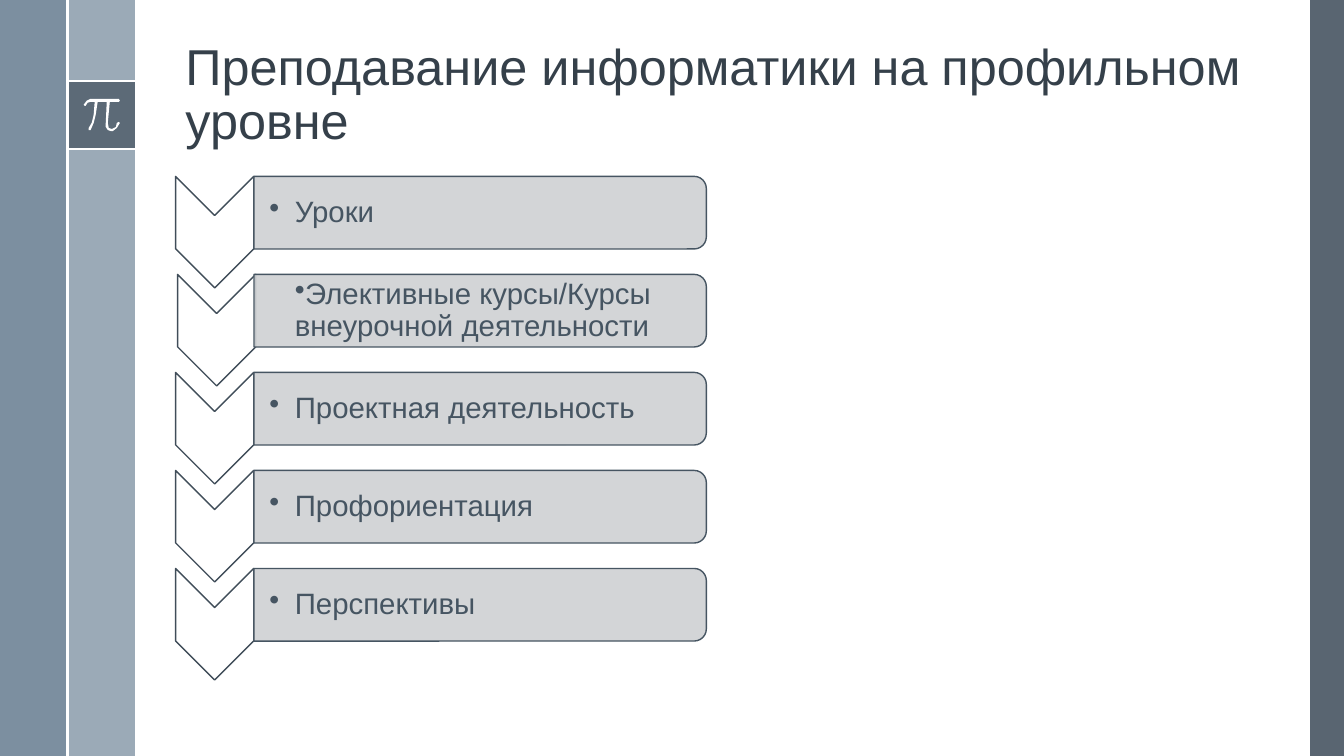
from dataclasses import dataclass

from lxml.etree import SubElement
from pptx import Presentation
from pptx.dml.color import RGBColor
from pptx.enum.shapes import MSO_CONNECTOR as Connector, MSO_SHAPE as Shape
from pptx.enum.text import MSO_ANCHOR as Anchor, MSO_AUTO_SIZE as AutoSize, PP_ALIGN as Align
from pptx.oxml.ns import qn
from pptx.util import Cm, Pt


@dataclass(frozen=True)
class Theme:
    font: str = "Arial"
    title_size: float = 36
    body_size: float = 21
    outline: float = 1
    rule: float = 1.5
    white: str = "FFFFFF"
    title: str = "35404A"
    dark: str = "475562"
    mid: str = "6A8093"
    light: str = "9BAAB7"
    chevron_line: str = "404D59"
    panel: str = "CFD1D3"
    body: str = "465562"


class SlideBuilder:
    def __init__(self, deck, theme):
        self.theme = theme
        self.page = deck.slides.add_slide(deck.slide_layouts[5])

    def paint(self, shape, fill, line=None, opacity=100):
        shape.shadow.inherit = False
        shape.fill.solid()
        shape.fill.fore_color.rgb = RGBColor.from_string(fill)
        if opacity < 100:
            color = shape.element.spPr.find(qn("a:solidFill"))[0]
            SubElement(color, qn("a:alpha"), val=str(opacity * 1000))
        if line:
            shape.line.color.rgb = RGBColor.from_string(line)
            shape.line.width = Pt(self.theme.outline)
        else:
            shape.line.fill.background()

    def block(self, left, top, width, height, fill, opacity=100):
        box = self.page.shapes.add_shape(
            Shape.RECTANGLE, Cm(left), Cm(top), Cm(width), Cm(height))
        self.paint(box, fill, opacity=opacity)

    def turned(self, kind, center_x, center_y, width, height, fill, line, opacity=100):
        """Add a shape turned a quarter clockwise about its center."""
        shape = self.page.shapes.add_shape(
            kind, Cm(center_x - width / 2), Cm(center_y - height / 2), Cm(width), Cm(height))
        shape.rotation = 90
        self.paint(shape, fill, line, opacity)

    def rule(self, x1, y1, x2, y2):
        line = self.page.shapes.add_connector(
            Connector.STRAIGHT, Cm(x1), Cm(y1), Cm(x2), Cm(y2))
        line.line.color.rgb = RGBColor.from_string(self.theme.white)
        line.line.width = Pt(self.theme.rule)
        SubElement(line.element.spPr, qn("a:effectLst"))

    def outline(self, points, unit, fill):
        builder = self.page.shapes.build_freeform(*points[0], scale=Cm(unit))
        builder.add_line_segments(points[1:], close=True)
        self.paint(builder.convert_to_shape(), fill)

    def set_text(self, frame, text, size, color, anchor):
        frame.text = text
        frame.word_wrap = True
        frame.auto_size = AutoSize.NONE
        frame.vertical_anchor = anchor
        para = frame.paragraphs[0]
        para.alignment = Align.LEFT
        para.line_spacing = 0.9
        for span in para.runs:
            span.font.name = self.theme.font
            span.font.size = Pt(size)
            span.font.color.rgb = RGBColor.from_string(color)
        return para

    def title(self, text, left, top, width, height):
        box = self.page.shapes.title
        box.left, box.top, box.width, box.height = Cm(left), Cm(top), Cm(width), Cm(height)
        self.set_text(box.text_frame, text, self.theme.title_size, self.theme.title,
                      Anchor.BOTTOM)

    def bullet(self, text, left, top, width, height, hanging):
        frame = self.page.shapes.add_textbox(
            Cm(left), Cm(top), Cm(width), Cm(height)).text_frame
        frame.margin_left = Cm(0.41)
        frame.margin_top = frame.margin_right = frame.margin_bottom = Cm(0.03)
        para = self.set_text(frame, text, self.theme.body_size, self.theme.body, Anchor.MIDDLE)
        indent = Cm(0.64)
        properties = para._p.get_or_add_pPr()
        properties.set("marL", str(indent))
        properties.set("indent", str(-indent if hanging else 0))
        SubElement(properties, qn("a:buChar"), char="•")


WIDTH, HEIGHT = 33.87, 19.05
RAIL = 1.7
BADGE_TOP = 2.05
ROW_PITCH = 2.47

# Pi sign, in hundredths of an inch
PI_UNIT = 0.0254
PI_SIGN = [
    (118, 98), (90, 98), (86, 100), (83, 104), (84, 105), (85, 105), (87, 102),
    (90, 101), (94, 101), (93, 114), (91, 122), (88, 127), (88, 129), (90, 129),
    (93, 122), (95, 114), (97, 101), (106, 101), (105, 122), (105, 126),
    (107, 129), (110, 130), (112, 130), (116, 127), (119, 122), (118, 121),
    (116, 122), (115, 126), (111, 128), (108, 127), (107, 122), (109, 101),
    (118, 101), (119, 100),
]

TOPICS = [
    "Уроки",
    "Элективные курсы/Курсы внеурочной деятельности",
    "Проектная деятельность",
    "Профориентация",
    "Перспективы",
]
UNINDENTED_TOPIC = 1


def main():
    deck = Presentation()
    deck.slide_width, deck.slide_height = Cm(WIDTH), Cm(HEIGHT)
    theme = Theme()
    slide = SlideBuilder(deck, theme)

    # Side rails and badge
    slide.block(33.02, 0, WIDTH - 33.02, HEIGHT, theme.dark, 90)
    slide.block(RAIL, 0, RAIL, HEIGHT, theme.light)
    slide.block(0, 0, RAIL, HEIGHT, theme.mid, 88)
    slide.block(RAIL, BADGE_TOP, RAIL, RAIL, theme.dark, 75)
    for y in (BADGE_TOP, BADGE_TOP + RAIL):
        slide.rule(RAIL, y, 2 * RAIL, y)
    slide.outline(PI_SIGN, PI_UNIT, theme.white)
    slide.rule(RAIL, 0, RAIL, HEIGHT)

    # Title
    slide.title("Преподавание информатики на профильном уровне", 4.42, 0.48, 27.18, 3.45)

    # Chevron list
    for row, topic in enumerate(TOPICS):
        drop = row * ROW_PITCH
        regular = row != UNINDENTED_TOPIC
        slide.turned(Shape.CHEVRON, 5.41 if regular else 5.46, 5.85 + drop, 2.81, 1.97,
                     theme.white, theme.chevron_line)
        slide.turned(Shape.ROUND_2_SAME_RECTANGLE, 12.1, 5.36 + drop, 1.83, 11.4,
                     theme.panel, theme.body, 90)
        slide.bullet(topic, 6.38, 4.54 + drop, 11.33, 1.65, hanging=regular)

    deck.save("out.pptx")


if __name__ == "__main__":
    main()
